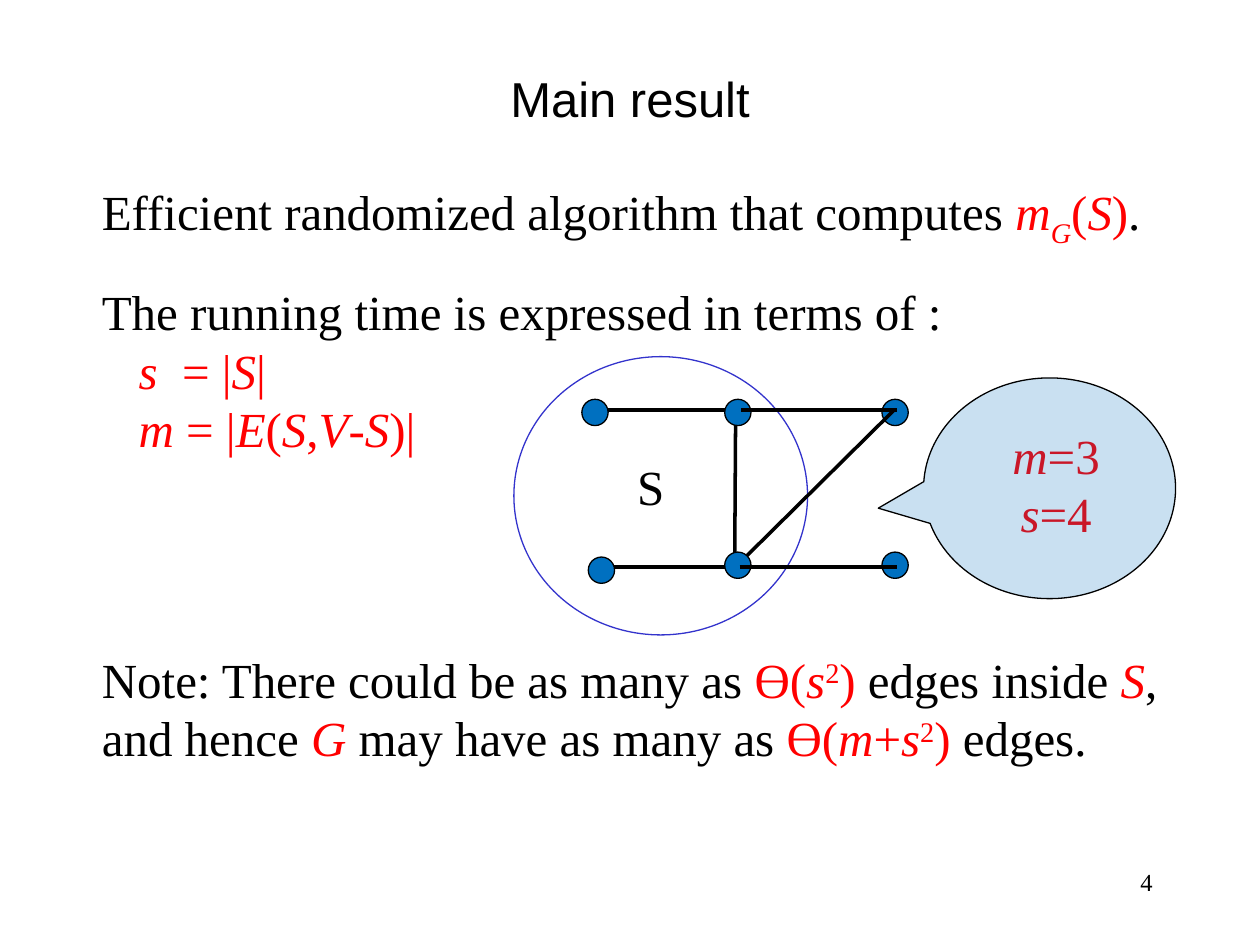
"""Build the slide that states the main result with its example graph."""
from typing import NamedTuple

import lxml.etree
import pptx
import pptx.dml.color
import pptx.enum.shapes
import pptx.enum.text
import pptx.oxml.ns
import pptx.util

Cm = pptx.util.Cm
Pt = pptx.util.Pt
Shape = pptx.enum.shapes.MSO_SHAPE
Align = pptx.enum.text.PP_ALIGN

COLORS = {"black": "000000", "red": "FF0000", "blue": "0070C0", "violet": "3333CC"}
SERIF = "Times New Roman"
LINE_FACTOR = 1.193
DOT_SIZE = 0.53


class Box(NamedTuple):
    left: float
    top: float
    width: float
    height: float


class Edge(NamedTuple):
    start_x: float
    start_y: float
    end_x: float
    end_y: float


class Span(NamedTuple):
    text: str
    color: str = "black"
    italic: bool = False
    baseline: int = 0


class Para(NamedTuple):
    spans: list[Span]
    before: float = 0
    indent: float = 0


def red(text: str, baseline: int = 0) -> Span:
    return Span(text, "red", False, baseline)


def var(text: str, baseline: int = 0) -> Span:
    return Span(text, "red", True, baseline)


TITLE = [Para([Span("Main result")])]
BODY = [
    Para([Span("Efficient randomized algorithm that computes "), var("m"), var("G", -25),
          red("("), var("S"), red(")"), Span(".")]),
    Para([Span("The running time is expressed in terms of :")], before=19),
    Para([var("s  "), red("= |"), var("S"), red("|")], indent=0.74),
    Para([var("m"), red(" = |"), var("E"), red("("), var("S"), red(","), var("V"),
          red("-"), var("S"), red(")|")], indent=0.74),
    Para([Span("Note: There could be as many as "), red("Ɵ("), var("s"), red("2", 30),
          red(") "), Span("edges inside "), var("S"), Span(", and hence "), var("G"),
          Span(" may have as many as "), red("Ɵ("), var("m"), red("+"), var("s"),
          red("2", 30), red(") "), Span("edges.")], before=110),
]
SIZES = [Para([var("m"), red("=3")]), Para([var("s"), red("=4")])]

EDGES_INSIDE = [
    Edge(11.96, 8.26, 17.98, 8.26),
    Edge(11.96, 11.43, 17.98, 11.43),
    Edge(14.83, 8.26, 14.81, 11.43),
]
EDGES_ACROSS = [
    Edge(14.94, 8.26, 18.08, 8.26),
    Edge(14.91, 11.43, 18.08, 11.43),
    Edge(15.06, 11.2, 18.03, 8.26),
]
DOTS = [(17.78, 8.05), (17.78, 11.13), (14.61, 8.05), (14.61, 11.13),
        (11.73, 8.05), (11.86, 11.23)]


def rgb(name: str) -> pptx.dml.color.RGBColor:
    return pptx.dml.color.RGBColor.from_string(COLORS[name])


def lengths(values: tuple) -> list:
    return [Cm(value) for value in values]


def place(shape, box: Box) -> None:
    shape.left, shape.top, shape.width, shape.height = lengths(box)


def write(shape, paras: list[Para], align=Align.LEFT, font: str = SERIF,
          size: float = 28, wrap: bool = True) -> None:
    frame = shape.text_frame
    frame.word_wrap = wrap
    frame.auto_size = pptx.enum.text.MSO_AUTO_SIZE.NONE
    frame.vertical_anchor = pptx.enum.text.MSO_ANCHOR.TOP
    for index, para in enumerate(paras):
        paragraph = frame.add_paragraph() if index else frame.paragraphs[0]
        paragraph.alignment = align
        paragraph.line_spacing = Pt(size * LINE_FACTOR)
        paragraph.space_before = Pt(para.before)
        paragraph.space_after = Pt(0)
        properties = paragraph._p.get_or_add_pPr()
        properties.set("marL", str(Cm(para.indent)))
        properties.set("indent", "0")
        lxml.etree.SubElement(properties, pptx.oxml.ns.qn("a:buNone"))
        for span in para.spans:
            run = paragraph.add_run()
            run.text = span.text
            run.font.name = font
            run.font.size = Pt(size)
            run.font.italic = span.italic
            run.font.color.rgb = rgb(span.color)
            if span.baseline:
                run._r.get_or_add_rPr().set("baseline", str(span.baseline * 1000))


def add_label(page, box: Box, paras: list[Para], align=Align.CENTER,
              size: float = 28, wrap: bool = False) -> None:
    label = page.shapes.add_textbox(*lengths(box))
    write(label, paras, align, size=size, wrap=wrap)


def add_edge(page, edge: Edge) -> None:
    line = page.shapes.add_connector(
        pptx.enum.shapes.MSO_CONNECTOR.STRAIGHT, *lengths(edge))
    line.line.color.rgb = rgb("black")
    line.line.width = Pt(2)
    lxml.etree.SubElement(line._element.spPr, pptx.oxml.ns.qn("a:effectLst"))


def add_figure(page, kind, box: Box, fill: str | None = None, outline: str = "black"):
    figure = page.shapes.add_shape(kind, *lengths(box))
    figure.shadow.inherit = False
    figure.line.color.rgb = rgb(outline)
    figure.line.width = Pt(0.75)
    if fill:
        figure.fill.solid()
        figure.fill.fore_color.rgb = rgb(fill)
    else:
        figure.fill.background()
    return figure


def add_callout(page) -> None:
    callout = add_figure(page, Shape.OVAL_CALLOUT, Box(18.62, 7.62, 5.08, 4.45), "blue")
    callout.adjustments[0] = -0.68
    callout.adjustments[1] = 0.09
    color = callout._element.spPr.find(
        pptx.oxml.ns.qn("a:solidFill")).find(pptx.oxml.ns.qn("a:srgbClr"))
    lxml.etree.SubElement(color, pptx.oxml.ns.qn("a:alpha")).set("val", "21000")


def main() -> None:
    deck = pptx.Presentation()
    deck.slide_width, deck.slide_height = Cm(25.4), Cm(19.05)
    page = deck.slides.add_slide(deck.slide_layouts[1])

    title, body = page.shapes.title, page.placeholders[1]
    place(title, Box(1.17, 1.27, 23.06, 1.45))
    write(title, TITLE, Align.CENTER, "Arial")
    place(body, Box(1.8, 3.71, 22.33, 12.22))
    write(body, BODY)
    add_label(page, Box(18.21, 17.35, 5.28, 1.27), [Para([Span("4")])],
              Align.RIGHT, size=14, wrap=True)
    add_label(page, Box(12.7, 9.09, 0.84, 1.45), [Para([Span("S")])])

    for edge in EDGES_INSIDE:
        add_edge(page, edge)
    for left, top in DOTS:
        add_figure(page, Shape.OVAL, Box(left, top, DOT_SIZE, DOT_SIZE), "blue")
    add_figure(page, Shape.OVAL, Box(10.36, 7.19, 5.92, 5.61), outline="violet")
    for edge in EDGES_ACROSS:
        add_edge(page, edge)

    add_label(page, Box(20.12, 8.46, 2.34, 2.64), SIZES)
    add_callout(page)
    deck.save("out.pptx")


if __name__ == "__main__":
    main()
